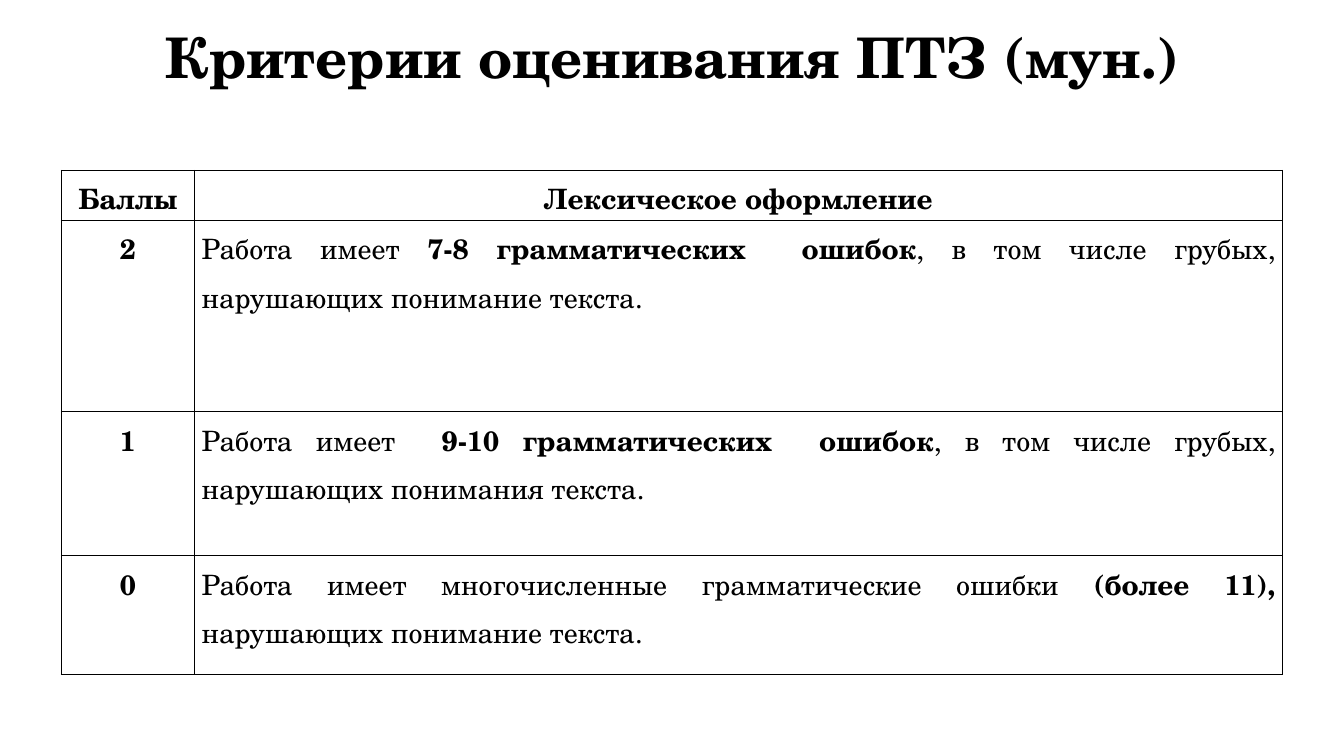
from lxml.etree import SubElement
from pptx import Presentation
from pptx.dml.color import RGBColor
from pptx.enum.text import MSO_ANCHOR, PP_ALIGN
from pptx.oxml.ns import qn
from pptx.util import Inches, Pt

FONT = "TeX Gyre Schola"
BLACK, WHITE = "000000", "FFFFFF"
COLUMN_WIDTHS = [1.32, 10.79]
ROW_HEIGHTS = [0.43, 1.9, 1.43, 1.18]

# Each cell is a list of (text, bold) runs
CRITERIA = [
    ([("Баллы", True)], [("Лексическое оформление", True)]),
    ([("2", True)], [("Работа имеет ", False),
                     ("7-8 грамматических  ошибок", True),
                     (", в том числе грубых, нарушающих понимание текста.", False)]),
    ([("1", True)], [("Работа имеет  ", False),
                     ("9-10 грамматических  ошибок", True),
                     (", в том числе грубых, нарушающих понимания текста.", False)]),
    ([("0", True)], [("Работа имеет многочисленные грамматические ошибки ", False),
                     ("(более 11), ", True),
                     ("нарушающих понимание текста.", False)]),
]


def rgb(color):
    return RGBColor.from_string(color)


def add_run(p, text, size=20, bold=False, color=BLACK):
    r = p.add_run()
    r.text = text
    r.font.name = FONT
    r.font.size = Pt(size)
    r.font.bold = bold
    r.font.color.rgb = rgb(color)


def set_borders(cell, color=BLACK, width=1):
    tcPr = cell._tc.get_or_add_tcPr()
    for side in ("lnL", "lnR", "lnT", "lnB"):
        ln = SubElement(tcPr, qn(f"a:{side}"), w=str(Pt(width)))
        fill = SubElement(ln, qn("a:solidFill"))
        SubElement(fill, qn("a:srgbClr"), val=color)


def fill_cell(cell, runs, align):
    set_borders(cell)
    cell.fill.solid()
    cell.fill.fore_color.rgb = rgb(WHITE)
    cell.margin_left = cell.margin_right = Inches(0.07)
    cell.margin_top = cell.margin_bottom = 0
    p = cell.text_frame.paragraphs[0]
    p.alignment = align
    p.line_spacing = 1.15
    p.space_after = Pt(2)
    for text, bold in runs:
        add_run(p, text, bold=bold)


def add_title(s, text):
    title = s.shapes.title
    title.left, title.top = Inches(0.92), Inches(0.21)
    title.width, title.height = Inches(11.5), Inches(0.78)
    tf = title.text_frame
    tf.word_wrap = True
    tf.vertical_anchor = MSO_ANCHOR.MIDDLE
    p = tf.paragraphs[0]
    p.alignment = PP_ALIGN.CENTER
    p.line_spacing = 0.9
    add_run(p, text, size=40, bold=True)


def add_criteria_table(s):
    table = s.shapes.add_table(
        len(ROW_HEIGHTS), len(COLUMN_WIDTHS), Inches(0.61), Inches(1.69),
        Inches(sum(COLUMN_WIDTHS)), Inches(sum(ROW_HEIGHTS))).table
    for column, width in zip(table.columns, COLUMN_WIDTHS):
        column.width = Inches(width)
    for i, (height, cells) in enumerate(zip(ROW_HEIGHTS, CRITERIA)):
        table.rows[i].height = Inches(height)
        for j, runs in enumerate(cells):
            justified = i > 0 and j > 0
            align = PP_ALIGN.JUSTIFY if justified else PP_ALIGN.CENTER
            fill_cell(table.cell(i, j), runs, align)


def main():
    prs = Presentation()
    prs.slide_width, prs.slide_height = Inches(13.33), Inches(7.5)
    s = prs.slides.add_slide(prs.slide_layouts[5])
    add_title(s, "Критерии оценивания ПТЗ (мун.)")
    add_criteria_table(s)
    prs.save("out.pptx")


if __name__ == "__main__":
    main()
